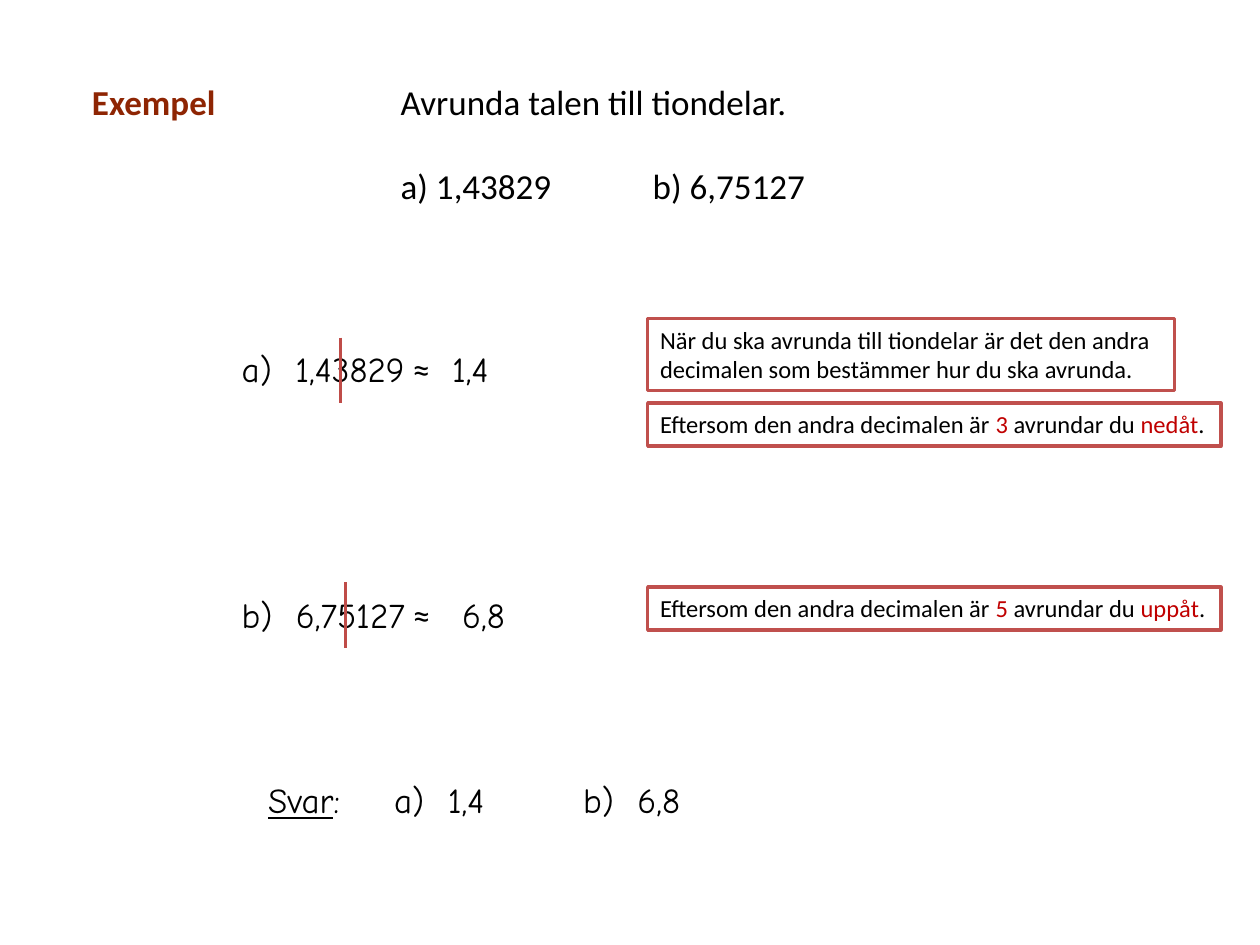
from lxml import etree
from pptx import Presentation
from pptx import util as u
from pptx.dml.color import RGBColor
from pptx.enum import shapes, text
from pptx.oxml.ns import qn

COLORS = {"heading": "8E2503", "ink": "000000", "accent": "C00000",
          "border": "C0504D", "cut": "BF4C48", "paper": "FFFFFF"}
PRINT, HAND = "Calibri", "Comic Neue"
LINE_HEIGHT, NOTE_HEIGHT = 5.87, 4.53

presentation = Presentation()
presentation.slide_width, presentation.slide_height = u.Inches(10), u.Inches(7.5)
slide = presentation.slides.add_slide(presentation.slide_layouts[1])


def share(left, top, width, height):
    """Turn percentages of the slide's width and height into lengths."""
    across, down = presentation.slide_width / 100, presentation.slide_height / 100
    return [u.Emu(round(value * unit)) for value, unit in
            zip((left, top, width, height), (across, down, across, down))]


def write(shape, paragraphs, size=20, font=PRINT, tabs=()):
    """Fill a shape with paragraphs of (text, colour) runs; tabs are in inches."""
    frame = shape.text_frame
    frame.word_wrap = True
    frame.auto_size = text.MSO_AUTO_SIZE.NONE
    frame.vertical_anchor = text.MSO_ANCHOR.TOP
    for index, runs in enumerate(paragraphs):
        paragraph = frame.add_paragraph() if index else frame.paragraphs[0]
        paragraph.alignment = text.PP_ALIGN.LEFT
        paragraph.space_before = u.Pt(24 if index else 0)
        paragraph.font.size, paragraph.font.name = u.Pt(size), font
        for words, color in runs:
            run = paragraph.add_run()
            run.text = words
            run.font.color.rgb = RGBColor.from_string(COLORS[color])
        properties = paragraph._p.get_or_add_pPr()
        properties.set("marL", "0")
        properties.set("indent", "0")
        bullet = etree.Element(qn("a:buNone"))
        properties.find(qn("a:spcBef")).addnext(bullet)
        if tabs:
            stops = etree.Element(qn("a:tabLst"))
            bullet.addnext(stops)
            for tab in tabs:
                etree.SubElement(stops, qn("a:tab"), pos=str(u.Inches(tab)), algn="l")
    return frame


# Heading and question
heading, question = slide.shapes.title, slide.placeholders[1]
heading.left, heading.top, heading.width, heading.height = share(6.3, 7.87, 11.8, LINE_HEIGHT)
question.left, question.top, question.width, question.height = share(30.8, 7.87, 38.5, 14.8)
heading_frame = write(heading, [[("Exempel", "heading")]])
heading_frame.margin_right = 0
heading_frame.paragraphs[0].font.bold = True
write(question, [[("Avrunda talen till tiondelar.", "ink")],
                 [("a) 1,43829 \t\tb) 6,75127", "ink")]], tabs=(1.5, 2))

# Worked solutions: task, width, result, result left, cut left, cut top, row
solutions = [("a)  1,43829", 19.1, "1,4", 34.9, 27, 35.73, 36.13),
             ("b)  6,75127", 20.3, "6,8", 35.7, 27.4, 61.6, 62.13)]
for task, width, result, result_left, cut_left, cut_top, row in solutions:
    working = slide.shapes.add_textbox(*share(18.2, row, width, LINE_HEIGHT))
    working.fill.solid()
    working.fill.fore_color.rgb = RGBColor.from_string(COLORS["paper"])
    frame = write(working, [[(task, "ink"), (" ≈", "ink")]], font=HAND)
    frame.paragraphs[0].runs[1].font.name = PRINT

    answer = slide.shapes.add_textbox(*share(result_left, row, 7.4, LINE_HEIGHT))
    write(answer, [[(result, "ink")]], font=HAND)

    left, top, _, length = share(cut_left, cut_top, 0, 6.93)
    cut = slide.shapes.add_connector(shapes.MSO_CONNECTOR.STRAIGHT,
                                     left, top, left, top + length)
    cut.line.color.rgb = RGBColor.from_string(COLORS["cut"])
    cut.line.width = u.Pt(1.5)
    etree.SubElement(cut._element.spPr, qn("a:effectLst"))

# Explanations: top, width, height, runs
notes = [(33.73, 41.8, 7.6, [("När du ska avrunda till tiondelar är det den andra "
                              "decimalen som bestämmer hur du ska avrunda.", "ink")])]
for top, digit, direction in [(42.67, "3", "nedåt"), (62.13, "5", "uppåt")]:
    notes.append((top, 45.5, NOTE_HEIGHT, [
        ("Eftersom den andra decimalen är ", "ink"), (digit, "accent"),
        (" avrundar du ", "ink"), (direction, "accent"), (".", "ink")]))
for top, width, height, runs in notes:
    note = slide.shapes.add_shape(shapes.MSO_SHAPE.RECTANGLE,
                                  *share(51.4, top, width, height))
    note.shadow.inherit = False
    note.fill.solid()
    note.fill.fore_color.rgb = RGBColor.from_string(COLORS["paper"])
    note.line.color.rgb = RGBColor.from_string(COLORS["border"])
    note.line.width = u.Pt(2)
    write(note, [runs], size=14)

# Final answer
summary = slide.shapes.add_textbox(*share(20.3, 81.73, 38.5, LINE_HEIGHT))
frame = write(summary, [[("Svar", "ink"), (": \ta)  1,4\t\tb)  6,8", "ink")]],
              font=HAND, tabs=(1, 2, 2.5))
frame.paragraphs[0].runs[0].font.underline = True

presentation.save("out.pptx")
